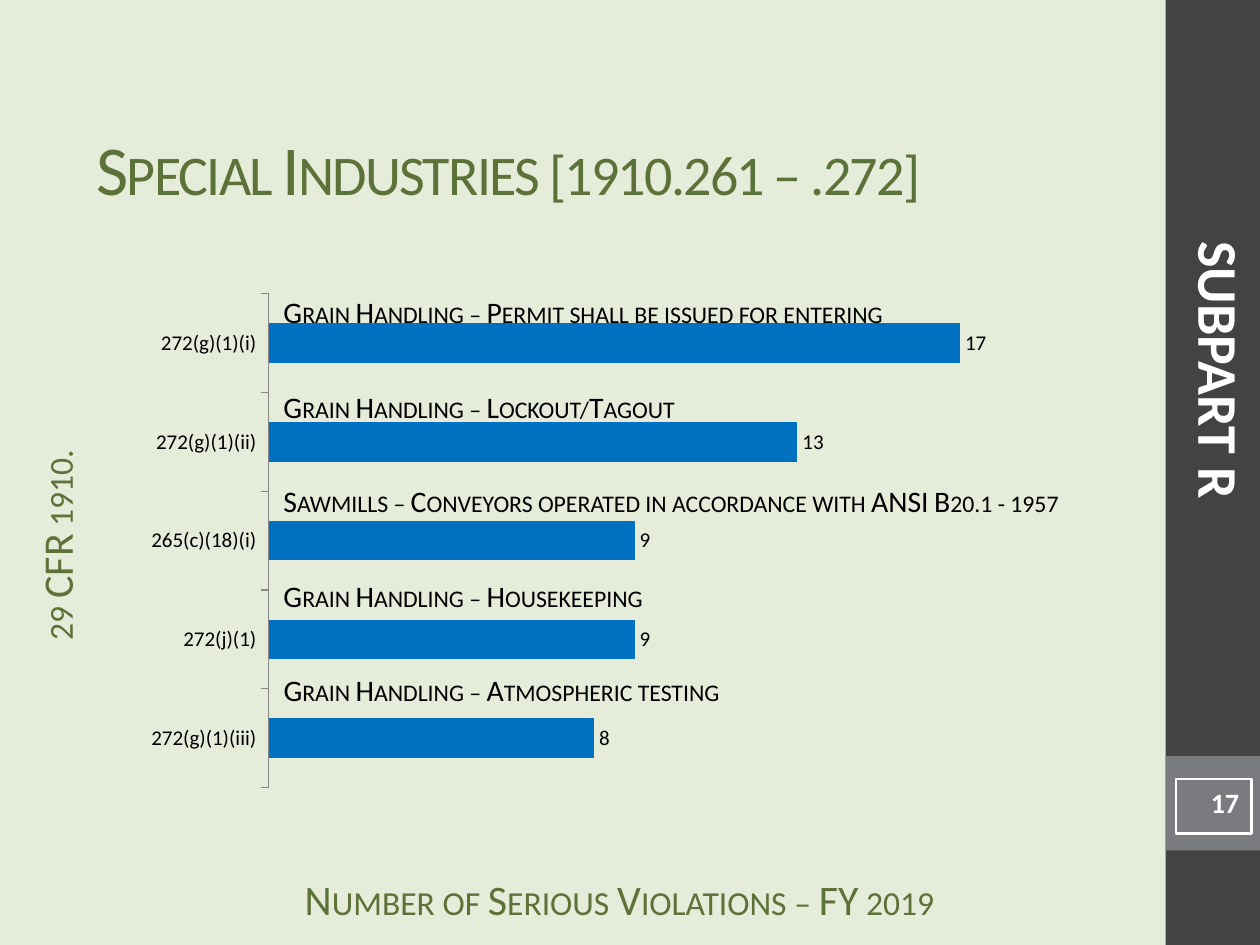
from dataclasses import dataclass

from lxml import etree
from pptx import Presentation
from pptx import util as u
from pptx.chart.data import CategoryChartData
from pptx.dml.color import RGBColor
from pptx.enum import chart as charts, shapes, text
from pptx.oxml import parse_xml
from pptx.oxml.ns import nsdecls, qn

COLUMNS, ROWS = 120, 90
WIDTH, HEIGHT = u.Inches(10), u.Inches(7.5)


@dataclass(frozen=True)
class Theme:
    """Colours and type sizes of the slide."""

    font: str = "Calibri"
    background: str = "E5ECD9"
    green: str = "5D7238"
    black: str = "000000"
    white: str = "FFFFFF"
    sidebar: str = "434342"
    number_band: str = "797B7E"
    bar: str = "0070C0"
    axis: str = "868686"
    title: int = 40
    subpart: int = 32
    caption: int = 24
    label: int = 17
    number: int = 16
    chart: int = 12


THEME = Theme()

VIOLATIONS = [
    ("272(g)(1)(i)", 17, "Grain Handling – Permit shall be issued for entering", 67),
    ("272(g)(1)(ii)", 13, "Grain Handling – Lockout/Tagout", 77),
    ("265(c)(18)(i)", 9, "Sawmills – Conveyors operated in accordance with ANSI B20.1 - 1957", 79),
    ("272(j)(1)", 9, "Grain Handling – Housekeeping", 36),
    ("272(g)(1)(iii)", 8, "Grain Handling – Atmospheric testing", 44),
]


def place(column, row, columns, rows):
    """Turn grid units into left, top, width and height."""
    return (
        u.Emu(int(WIDTH * column / COLUMNS)),
        u.Emu(int(HEIGHT * row / ROWS)),
        u.Emu(int(WIDTH * columns / COLUMNS)),
        u.Emu(int(HEIGHT * rows / ROWS)),
    )


def color(value):
    """Return a colour from its hex code."""
    return RGBColor.from_string(value)


def write(shape, words, size, ink, align=text.PP_ALIGN.LEFT, bold=False, small_caps=False):
    """Write one formatted run into a shape and return it."""
    paragraph = shape.text_frame.paragraphs[0]
    paragraph.alignment = align
    run = paragraph.add_run()
    run.text = words
    run.font.name = THEME.font
    run.font.size = u.Pt(size)
    run.font.bold = bold
    run.font.color.rgb = color(ink)
    if small_caps:
        run.font._element.set("cap", "small")
    return run


def add_text(slide, box, words, size, ink, insets=(0, 0, 0, 0), rotation=0, **style):
    """Add a wrapping text box with insets in inches."""
    shape = slide.shapes.add_textbox(*place(*box))
    shape.rotation = rotation
    frame = shape.text_frame
    frame.word_wrap = True
    frame.vertical_anchor = text.MSO_ANCHOR.TOP
    frame.margin_left, frame.margin_top, frame.margin_right, frame.margin_bottom = map(u.Inches, insets)
    write(shape, words, size, ink, **style)
    return shape


def add_rectangle(slide, box, fill=None, line=None):
    """Add a flat rectangle with an optional fill and outline."""
    shape = slide.shapes.add_shape(shapes.MSO_SHAPE.RECTANGLE, *place(*box))
    shape.shadow.inherit = False
    if fill:
        shape.fill.solid()
        shape.fill.fore_color.rgb = color(fill)
    else:
        shape.fill.background()
    if line:
        shape.line.color.rgb = color(line)
        shape.line.width = u.Pt(1.5)
    else:
        shape.line.fill.background()
    return shape


def add_title(slide, words):
    """Move and format the title placeholder."""
    title = slide.shapes.title
    title.left, title.top, title.width, title.height = place(8, 7, 102.7, 18)
    title.text_frame.vertical_anchor = text.MSO_ANCHOR.MIDDLE
    run = write(title, words, THEME.title, THEME.green, small_caps=True)
    run.font._element.set("spc", "-100")


def set_plot_area(chart, **shares):
    """Fix the inner plot area as shares of the chart."""
    plot_area = chart._chartSpace.chart.plotArea
    for layout in plot_area.findall(qn("c:layout")):
        plot_area.remove(layout)
    layout = parse_xml(f"<c:layout {nsdecls('c')}><c:manualLayout/></c:layout>")
    settings = {"layoutTarget": "inner", "xMode": "edge", "yMode": "edge", **shares}
    for name, value in settings.items():
        etree.SubElement(layout[0], qn(f"c:{name}")).set("val", str(value))
    plot_area.insert(0, layout)


def add_bar_chart(slide, box):
    """Add the bar chart of violations, largest on top."""
    data = CategoryChartData()
    data.categories = [section for section, *_ in reversed(VIOLATIONS)]
    data.add_series("Series 1", [count for _, count, *_ in reversed(VIOLATIONS)])
    chart = slide.shapes.add_chart(charts.XL_CHART_TYPE.BAR_CLUSTERED, *place(*box), data).chart
    chart.has_legend = chart.has_title = False
    chart.font.name = THEME.font
    chart.font.size = u.Pt(THEME.chart)
    chart.font.color.rgb = color(THEME.black)
    chart.category_axis.format.line.color.rgb = color(THEME.axis)
    chart.category_axis.major_tick_mark = charts.XL_TICK_MARK.OUTSIDE
    values = chart.value_axis
    values.visible = values.has_major_gridlines = False
    values.minimum_scale, values.maximum_scale = 0, 18
    plot = chart.plots[0]
    plot.vary_by_categories = False
    plot.gap_width = 150
    fill = plot.series[0].format.fill
    fill.solid()
    fill.fore_color.rgb = color(THEME.bar)
    plot.has_data_labels = True
    plot.data_labels.show_value = True
    plot.data_labels.position = charts.XL_LABEL_POSITION.OUTSIDE_END
    plot.data_labels.font.size = u.Pt(THEME.chart)
    set_plot_area(chart, x=0.15, y=0.02, w=0.83, h=0.96)


def add_bar_labels(slide):
    """Describe each bar at an equal row step."""
    for index, (_, _, words, columns) in enumerate(VIOLATIONS):
        add_text(slide, (27, 28 + 9 * index, columns, 4), words,
                 THEME.label, THEME.black, small_caps=True)


def add_sidebar(slide):
    """Add the dark band with its subpart name and page number."""
    add_rectangle(slide, (111, 0, 9, ROWS), THEME.sidebar)
    add_rectangle(slide, (111, 72, 9, 9), THEME.number_band)
    number = add_rectangle(slide, (112, 74.2, 7.2, 5.2), line=THEME.white)
    number.text_frame.vertical_anchor = text.MSO_ANCHOR.TOP
    write(number, "17", THEME.number, THEME.white, text.PP_ALIGN.RIGHT, bold=True)
    add_text(slide, (80.3, 32, 71.8, 7.7), "SUBPART R ", THEME.subpart, THEME.white,
             insets=(0.1, 0.05, 0.1, 0.05), rotation=90, align=text.PP_ALIGN.CENTER, bold=True)


def add_captions(slide):
    """Name the two chart axes."""
    captions = [
        ("Number of Serious Violations – FY 2019", (25, 83.2, 68, 4), 0),
        ("29 CFR 1910.", (-18.7, 48.4, 50.3, 7), 270),
    ]
    for words, box, rotation in captions:
        add_text(slide, box, words, THEME.caption, THEME.green, insets=(0.1, 0, 0.1, 0.05),
                 rotation=rotation, align=text.PP_ALIGN.CENTER, small_caps=True)


def main():
    """Build and save the slide."""
    presentation = Presentation()
    presentation.slide_width, presentation.slide_height = WIDTH, HEIGHT
    slide = presentation.slides.add_slide(presentation.slide_layouts[5])
    slide.background.fill.solid()
    slide.background.fill.fore_color.rgb = color(THEME.background)
    add_sidebar(slide)
    add_captions(slide)
    add_bar_chart(slide, (13, 27, 84, 49))
    add_title(slide, "Special Industries [1910.261 – .272]")
    add_bar_labels(slide)
    presentation.save("out.pptx")


if __name__ == "__main__":
    main()
